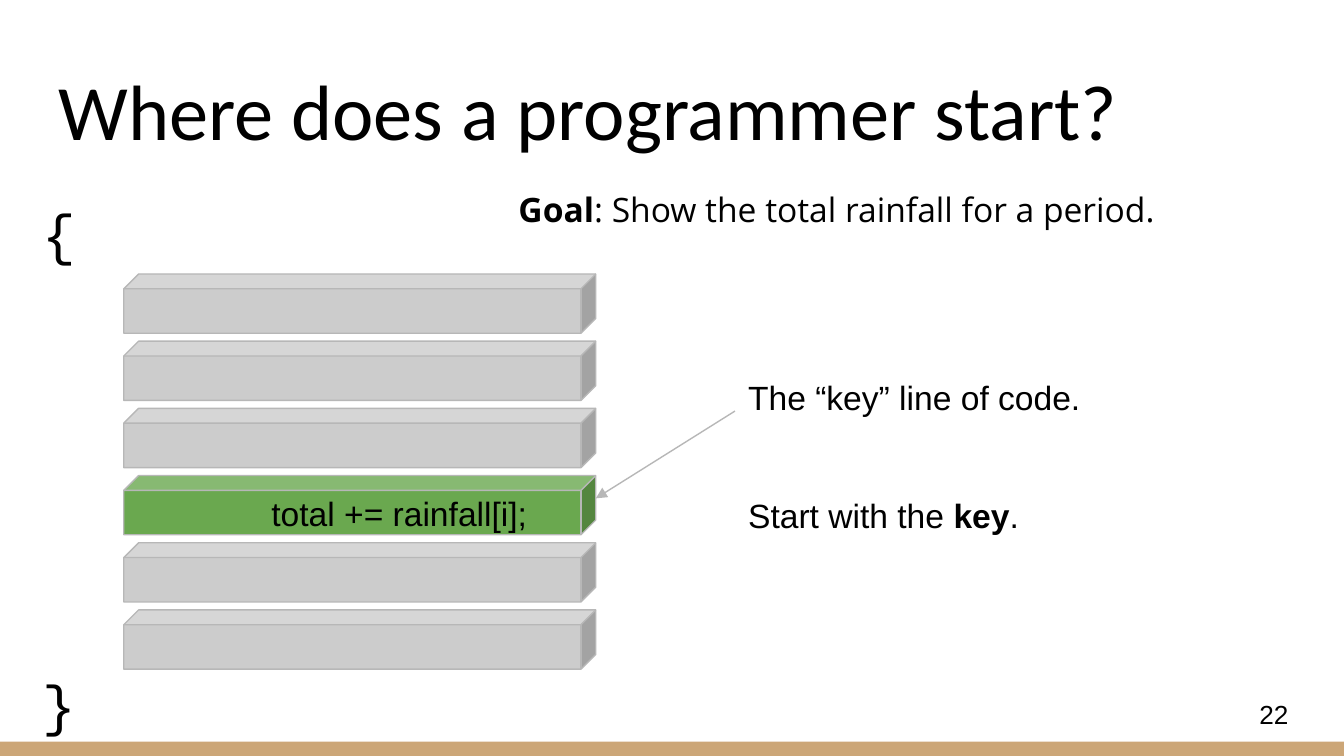
from lxml.etree import SubElement
from pptx import Presentation
from pptx.dml.color import RGBColor
from pptx.enum.shapes import MSO_CONNECTOR, MSO_SHAPE
from pptx.enum.text import MSO_ANCHOR, PP_ALIGN
from pptx.oxml.ns import qn
from pptx.util import Cm, Pt

BLACK = RGBColor(0x00, 0x00, 0x00)
GRAY = RGBColor(0xCC, 0xCC, 0xCC)
OUTLINE = RGBColor(0xB7, 0xB7, 0xB7)
GREEN = RGBColor(0x6A, 0xA8, 0x4F)
TAN = RGBColor(0xCC, 0xA6, 0x77)

INSET = 0.25
BLOCK_LEFT, BLOCK_TOP = 2.34, 5.18
BLOCK_WIDTH, BLOCK_HEIGHT = 8.92, 1.12
BLOCK_STEP = 1.27
BLOCK_COUNT, KEY_INDEX = 6, 3
CODE_INDENT = 2.54


def prepare_frame(shape, anchor=MSO_ANCHOR.TOP, indent=0):
    frame = shape.text_frame
    frame.word_wrap = True
    frame.vertical_anchor = anchor
    frame.margin_left = Cm(INSET + indent)
    frame.margin_right = frame.margin_top = frame.margin_bottom = Cm(INSET)
    return frame


def add_runs(paragraph, runs, size, font="Arial"):
    """Add (text, bold) pairs to a left-aligned paragraph."""
    paragraph.alignment = PP_ALIGN.LEFT
    for text, bold in runs:
        run = paragraph.add_run()
        run.text = text
        run.font.name = font
        run.font.size = Pt(size)
        run.font.bold = bold
        run.font.color.rgb = BLACK


def add_text(slide, left, top, width, height, runs, size, font="Arial",
             anchor=MSO_ANCHOR.TOP):
    shape = slide.shapes.add_textbox(Cm(left), Cm(top), Cm(width), Cm(height))
    frame = prepare_frame(shape, anchor)
    add_runs(frame.paragraphs[0], runs, size, font)
    return frame


def add_solid(slide, kind, left, top, width, height, fill, outline=None):
    shape = slide.shapes.add_shape(kind, Cm(left), Cm(top), Cm(width), Cm(height))
    shape.shadow.inherit = False
    shape.fill.solid()
    shape.fill.fore_color.rgb = fill
    if outline is None:
        shape.line.fill.background()
    else:
        shape.line.color.rgb = outline
        shape.line.width = Pt(0.75)
    return shape


def add_arrow(slide, start_x, start_y, end_x, end_y):
    arrow = slide.shapes.add_connector(
        MSO_CONNECTOR.STRAIGHT, Cm(start_x), Cm(start_y), Cm(end_x), Cm(end_y))
    arrow.line.color.rgb = OUTLINE
    arrow.line.width = Pt(0.75)
    SubElement(arrow.line._get_or_add_ln(), qn("a:tailEnd"), type="triangle")
    SubElement(arrow._element.spPr, qn("a:effectLst"))


def add_code_blocks(slide):
    for index in range(BLOCK_COUNT):
        is_key = index == KEY_INDEX
        block = add_solid(slide, MSO_SHAPE.CUBE, BLOCK_LEFT,
                          BLOCK_TOP + index * BLOCK_STEP, BLOCK_WIDTH,
                          BLOCK_HEIGHT, GREEN if is_key else GRAY, OUTLINE)
        if is_key:
            frame = prepare_frame(block, MSO_ANCHOR.MIDDLE, CODE_INDENT)
            add_runs(frame.paragraphs[0], [("total += rainfall[i];", False)], 18)


def main():
    presentation = Presentation()
    presentation.slide_width = Cm(25.4)
    presentation.slide_height = Cm(14.29)
    slide = presentation.slides.add_slide(presentation.slide_layouts[6])

    # Footer band
    add_solid(slide, MSO_SHAPE.RECTANGLE, 0, 14.02, 25.4, 0.27, TAN)

    # Title and goal
    add_text(slide, 0.86, 0.89, 23.67, 2.31,
             [("Where does a programmer start?", False)], 42, "Calibri",
             MSO_ANCHOR.BOTTOM)
    goal = add_text(slide, 9.55, 3.2, 15.32, 1.5,
                    [("Goal", True),
                     (": Show the total rainfall for a period.", False)],
                    18, "Open Sans")
    goal.paragraphs[0].line_spacing = 1.15

    # Code blocks between braces
    add_code_blocks(slide)
    for brace, top in (("{", 3.51), ("}", 12.4)):
        add_text(slide, 0.56, top, 0.89, 1.5, [(brace, False)], 30, "Courier New")

    # Remarks and pointer to the key line
    add_arrow(slide, 13.89, 7.77, BLOCK_LEFT + BLOCK_WIDTH, 9.42)
    remarks = add_text(slide, 13.89, 6.88, 9.96, 1.78,
                       [("The “key” line of code.", False)], 18)
    advice = remarks.add_paragraph()
    advice.space_before = Pt(41.4)
    add_runs(advice, [("Start with the ", False), ("key", True), (".", False)], 18)

    # Slide number
    add_text(slide, 23.55, 12.95, 1.52, 1.09, [("22", False)], 14,
             anchor=MSO_ANCHOR.MIDDLE)

    presentation.save("out.pptx")


if __name__ == "__main__":
    main()
